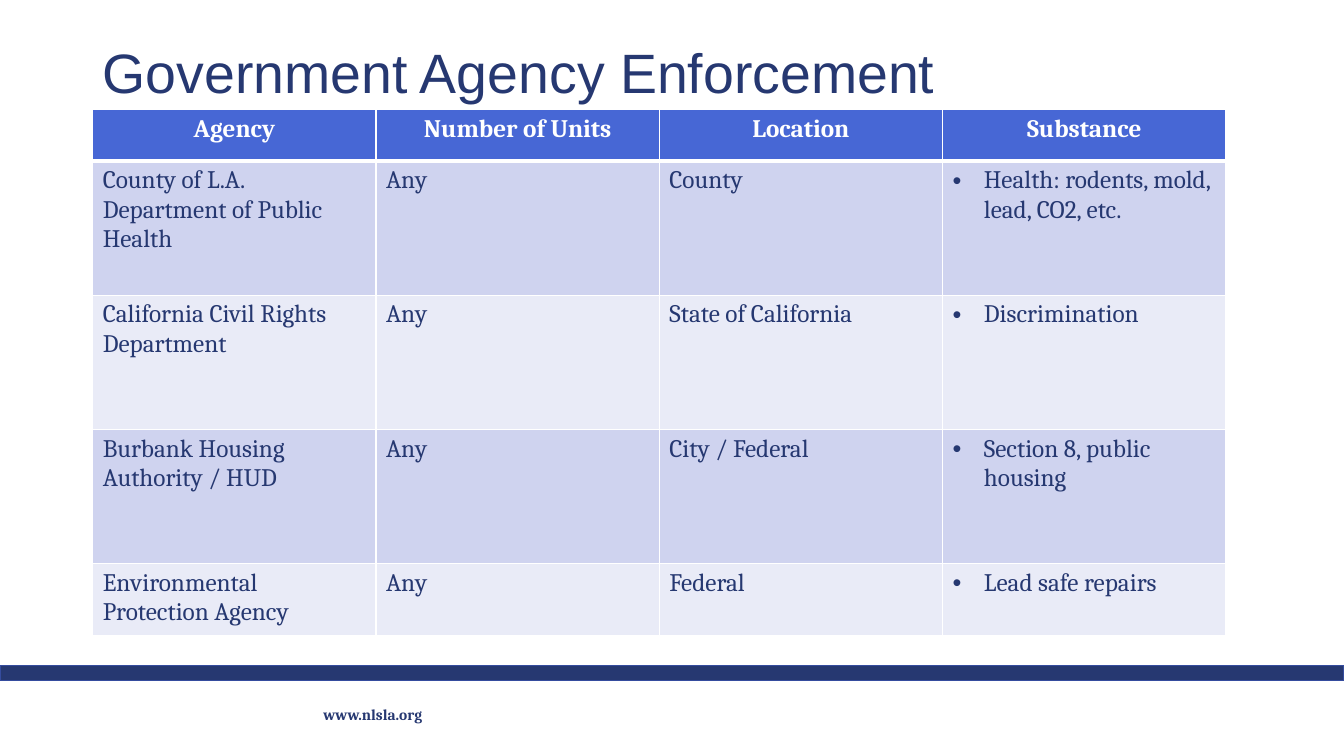
from lxml.etree import SubElement
from pptx import Presentation
from pptx.dml.color import RGBColor
from pptx.enum.shapes import MSO_SHAPE as Shape
from pptx.enum.text import MSO_ANCHOR as Anchor, MSO_AUTO_SIZE as AutoSize, PP_ALIGN as Align
from pptx.oxml.ns import qn
from pptx.util import Inches, Pt

NAVY = RGBColor(0x26, 0x38, 0x71)
EDGE = RGBColor(0x35, 0x4C, 0x9E)
BLUE = RGBColor(0x47, 0x67, 0xD5)
LILAC = RGBColor(0xCF, 0xD3, 0xEF)
PALE = RGBColor(0xE9, 0xEB, 0xF7)
WHITE = RGBColor(0xFF, 0xFF, 0xFF)

HEADINGS = ("Agency", "Number of Units", "Location", "Substance")
AGENCIES = (
    ("County of L.A. Department of Public Health", "Any", "County",
     "Health: rodents, mold, lead, CO2, etc."),
    ("California Civil Rights Department", "Any", "State of California",
     "Discrimination"),
    ("Burbank Housing Authority / HUD", "Any", "City / Federal",
     "Section 8, public housing"),
    ("Environmental Protection Agency", "Any", "Federal",
     "Lead safe repairs"),
)
ROW_HEIGHTS = (6.8, 17.73, 17.73, 17.73, 9.6)


class SlideBuilder:
    heading_font = "Arial"
    body_font = "Cambria"
    body_size = 18

    def __init__(self, deck):
        self.deck = deck
        self.slide = deck.slides.add_slide(deck.slide_layouts[6])

    def across(self, percent):
        return round(self.deck.slide_width * percent / 100)

    def down(self, percent):
        return round(self.deck.slide_height * percent / 100)

    def area(self, left, top, width, height):
        return self.across(left), self.down(top), self.across(width), self.down(height)

    def style(self, para, font, size, color, bold=False):
        for span in para.runs:
            span.font.name = font
            span.font.size = Pt(size)
            span.font.color.rgb = color
            span.font.bold = bold

    def bar(self, *place):
        bar = self.slide.shapes.add_shape(Shape.RECTANGLE, *self.area(*place))
        bar.shadow.inherit = False
        bar.fill.solid()
        bar.fill.fore_color.rgb = NAVY
        bar.line.color.rgb = EDGE
        bar.line.width = Pt(1)

    def text(self, words, place, font, size, bold=False, anchor=Anchor.TOP,
             spacing=1.0, fit=AutoSize.NONE):
        box = self.slide.shapes.add_textbox(*self.area(*place))
        frame = box.text_frame
        frame.text = words
        frame.word_wrap = True
        frame.auto_size = fit
        frame.vertical_anchor = anchor
        para = frame.paragraphs[0]
        para.line_spacing = spacing
        self.style(para, font, size, NAVY, bold)

    def borders(self, cell, bottom):
        properties = cell._tc.get_or_add_tcPr()
        for side, points in (("L", 1), ("R", 1), ("T", 1), ("B", bottom)):
            line = SubElement(properties, qn(f"a:ln{side}"), w=str(Pt(points)))
            fill = SubElement(line, qn("a:solidFill"))
            SubElement(fill, qn("a:srgbClr"), val=str(WHITE))

    def bullet(self, para):
        properties = para._p.get_or_add_pPr()
        indent = Inches(0.31)
        properties.set("marL", str(indent))
        properties.set("indent", str(-indent))
        SubElement(properties, qn("a:buFont"), typeface="Arial")
        SubElement(properties, qn("a:buChar"), char="•")

    def cell(self, cell, words, fill, header, bulleted):
        cell.text = words
        self.borders(cell, 3 if header else 1)
        cell.fill.solid()
        cell.fill.fore_color.rgb = fill
        para = cell.text_frame.paragraphs[0]
        if header:
            para.alignment = Align.CENTER
        elif bulleted:
            self.bullet(para)
        self.style(para, self.body_font, self.body_size, WHITE if header else NAVY, header)

    def table(self, left, top, width, heights, rows):
        count = len(rows[0])
        place = self.area(left, top, width, sum(heights))
        table = self.slide.shapes.add_table(len(rows), count, *place).table
        for column in table.columns:
            column.width = self.across(width / count)
        for i, (words, height) in enumerate(zip(rows, heights)):
            table.rows[i].height = self.down(height)
            fill = BLUE if i == 0 else (PALE, LILAC)[i % 2]
            for j, word in enumerate(words):
                self.cell(table.cell(i, j), word, fill, i == 0, j == count - 1)


def main():
    deck = Presentation()
    deck.slide_width = Inches(13.33)
    deck.slide_height = Inches(7.5)
    page = SlideBuilder(deck)
    page.bar(0, 88, 100, 2)
    page.text("www.nlsla.org", (23.33, 92.67, 37.96, 3.87), page.body_font, 11,
              bold=True, fit=AutoSize.SHAPE_TO_FIT_TEXT)
    page.text("Government Agency Enforcement", (6.9, 5.33, 79.22, 9.33),
              page.heading_font, 39.6, anchor=Anchor.MIDDLE, spacing=0.9)
    page.table(6.9, 14.53, 84.32, ROW_HEIGHTS, (HEADINGS, *AGENCIES))
    deck.save("out.pptx")


if __name__ == "__main__":
    main()
